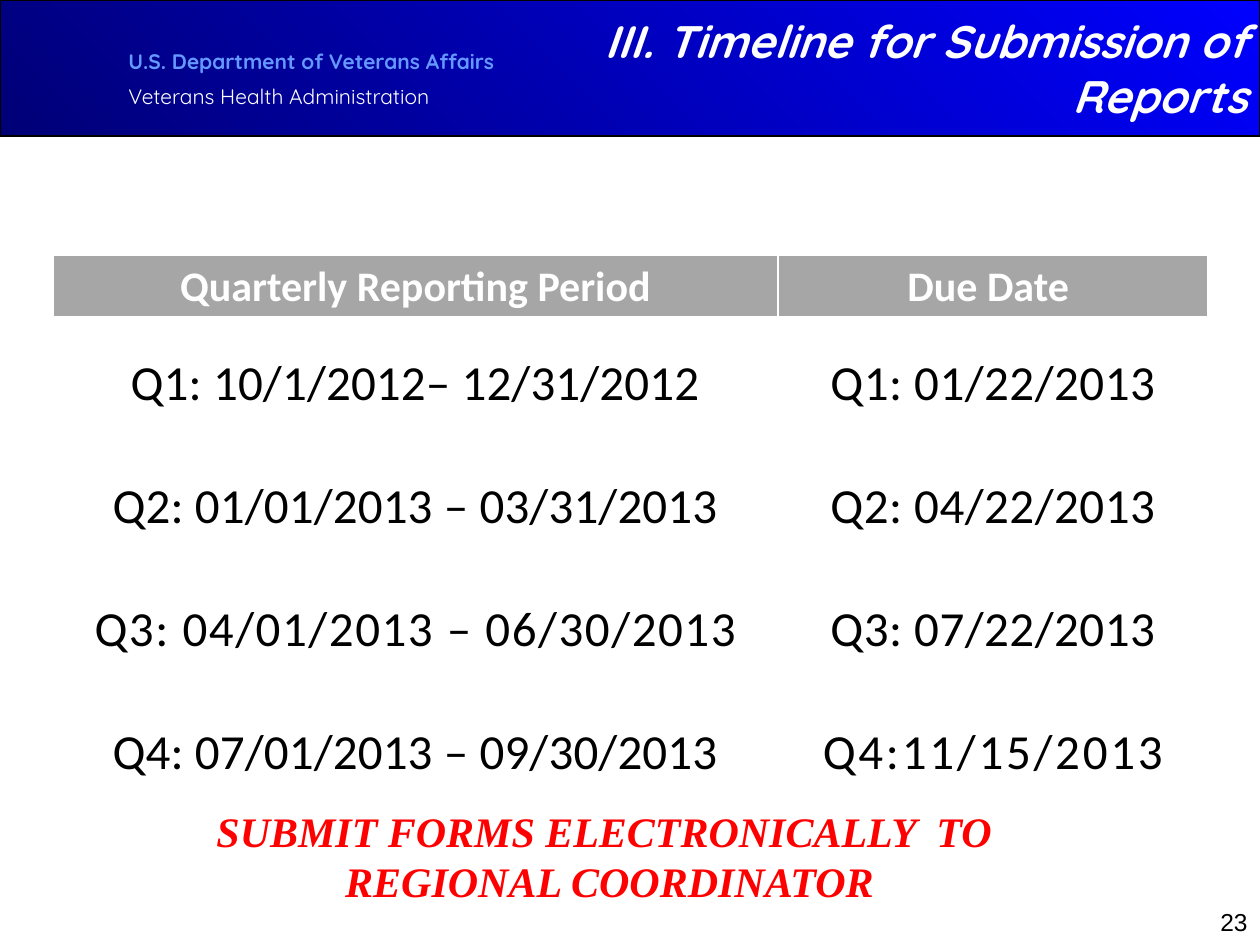
from lxml import etree
from pptx import Presentation
from pptx import util as u
from pptx.dml.color import RGBColor
from pptx.enum import shapes, text
from pptx.oxml.ns import qn

COLORS = {
    "navy": "000076", "blue": "0000FF", "sky": "6699FF", "white": "FFFFFF",
    "black": "000000", "gray": "A6A6A6", "red": "FF0000",
}
ALIGN = text.PP_ALIGN

HEADINGS = ("Quarterly Reporting Period", "Due Date ")
# Each entry is (text, letter spacing in hundredths of a point).
QUARTERS = (
    (("Q1: 10/1/2012– 12/31/2012", 10), ("Q1: 01/22/2013", 30)),
    (("Q2: 01/01/2013 – 03/31/2013", 10), ("Q2: 04/22/2013", 30)),
    (("Q3: 04/01/2013 – 06/30/2013", 90), ("Q3: 07/22/2013", 30)),
    (("Q4: 07/01/2013 – 09/30/2013", 10), ("Q4:11/15/2013", 160)),
)


def px(length):
    return u.Emu(round(length * 914400 / 126))


def color(name):
    return RGBColor.from_string(COLORS[name])


def place(shape, box):
    shape.left, shape.top, shape.width, shape.height = map(px, box)


def style(paragraph, font_name, size, color_name, align=ALIGN.LEFT,
          bold=False, italic=False):
    paragraph.alignment = align
    for run in paragraph.runs:
        font = run.font
        font.name, font.size = font_name, u.Pt(size)
        font.bold, font.italic = bold, italic
        font.color.rgb = color(color_name)


def add_lines(slide, box, lines):
    """Add a wrapping text box and return its paragraphs."""
    frame = slide.shapes.add_textbox(*map(px, box)).text_frame
    frame.word_wrap = True
    frame.text = "\n".join(lines)
    return frame.paragraphs


def build_header(slide, box):
    left, top, width, height = box
    band = slide.shapes.add_shape(shapes.MSO_SHAPE.RECTANGLE, *map(px, box))
    band.shadow.inherit = False
    band.fill.gradient()
    band.fill.gradient_angle = 45
    for stop, name, position in zip(band.fill.gradient_stops, ("navy", "blue"), (0, 1)):
        stop.color.rgb = color(name)
        stop.position = position
    band.line.color.rgb = color("black")
    band.line.width = u.Pt(0.75)

    agency, division = add_lines(
        slide, (left + 116, top + 42, 504, 76),
        ("U.S. Department of Veterans Affairs", "Veterans Health Administration"))
    style(agency, "Quicksand", 12, "sky", bold=True)
    style(division, "Quicksand", 12, "white")
    division.space_before = u.Pt(6)

    title = slide.shapes.title
    place(title, (left + 504, top, width - 504, height))
    frame = title.text_frame
    frame.text = "III. Timeline for Submission of Reports"
    frame.word_wrap = True
    frame.auto_size = text.MSO_AUTO_SIZE.NONE
    frame.vertical_anchor = text.MSO_ANCHOR.MIDDLE
    heading = frame.paragraphs[0]
    style(heading, "Quicksand", 26, "white", ALIGN.RIGHT, bold=True, italic=True)
    hanging = px(118)
    properties = heading._p.get_or_add_pPr()
    properties.set("marL", str(hanging))
    properties.set("indent", str(-hanging))
    # The title placeholder comes first in the tree; bring it above the band.
    slide.shapes._spTree.append(title._element)


def set_borders(cell, top, bottom):
    """Draw white cell borders; top and bottom are widths in points."""
    properties = cell._tc.get_or_add_tcPr()
    for index, (side, width) in enumerate((("L", 1), ("R", 1), ("T", top), ("B", bottom))):
        line = etree.Element(qn(f"a:ln{side}"), w=str(u.Pt(width)))
        fill = etree.SubElement(line, qn("a:solidFill"))
        etree.SubElement(fill, qn("a:srgbClr"), val=COLORS["white"])
        properties.insert(index, line)


def fill_cell(cell, wording, fill_name):
    cell.text = wording
    cell.fill.solid()
    cell.fill.fore_color.rgb = color(fill_name)
    return cell.text_frame.paragraphs[0]


def build_schedule(slide, box):
    last_row = len(QUARTERS)
    schedule = slide.shapes.add_table(last_row + 1, 2, *map(px, box)).table
    schedule.horz_banding = False
    period_width = 725
    schedule.columns[0].width = px(period_width)
    schedule.columns[1].width = px(box[2] - period_width)
    schedule.rows[0].height = px(57)

    for column, wording in enumerate(HEADINGS):
        cell = schedule.cell(0, column)
        heading = fill_cell(cell, wording, "gray")
        style(heading, "Calibri", 24, "white", ALIGN.CENTER, bold=True)
        set_borders(cell, 1, 3)

    for row, quarter in enumerate(QUARTERS, start=1):
        schedule.rows[row].height = px(123)
        for column, (wording, spacing) in enumerate(quarter):
            cell = schedule.cell(row, column)
            dates = fill_cell(cell, wording, "white")
            cell.margin_left = cell.margin_right = 0
            cell.margin_top = cell.margin_bottom = 0
            cell.vertical_anchor = text.MSO_ANCHOR.MIDDLE
            style(dates, "Calibri", 28, "black", ALIGN.CENTER)
            dates.line_spacing = 1.15
            dates.runs[0]._r.get_or_add_rPr().set("spc", str(spacing))
            set_borders(cell, 3, 1 if row == last_row else 3)


def build_instruction(slide, box):
    lines = ("SUBMIT FORMS ELECTRONICALLY  TO ", "REGIONAL COORDINATOR")
    for line in add_lines(slide, box, lines):
        style(line, "Times New Roman", 24, "red", ALIGN.CENTER, bold=True, italic=True)


def build_page_number(slide, box):
    number, = add_lines(slide, box, ("23",))
    style(number, "Arial", 14, "black", ALIGN.RIGHT)


def main():
    deck = Presentation()
    deck.slide_width, deck.slide_height = px(1260), px(945)
    slide = deck.slides.add_slide(deck.slide_layouts[5])
    build_header(slide, (0, 0, 1260, 136))
    build_page_number(slide, (998, 901, 262, 63))
    build_schedule(slide, (53, 255, 1155, 549))
    build_instruction(slide, (53, 799, 1113, 115))
    deck.save("out.pptx")


if __name__ == "__main__":
    main()
